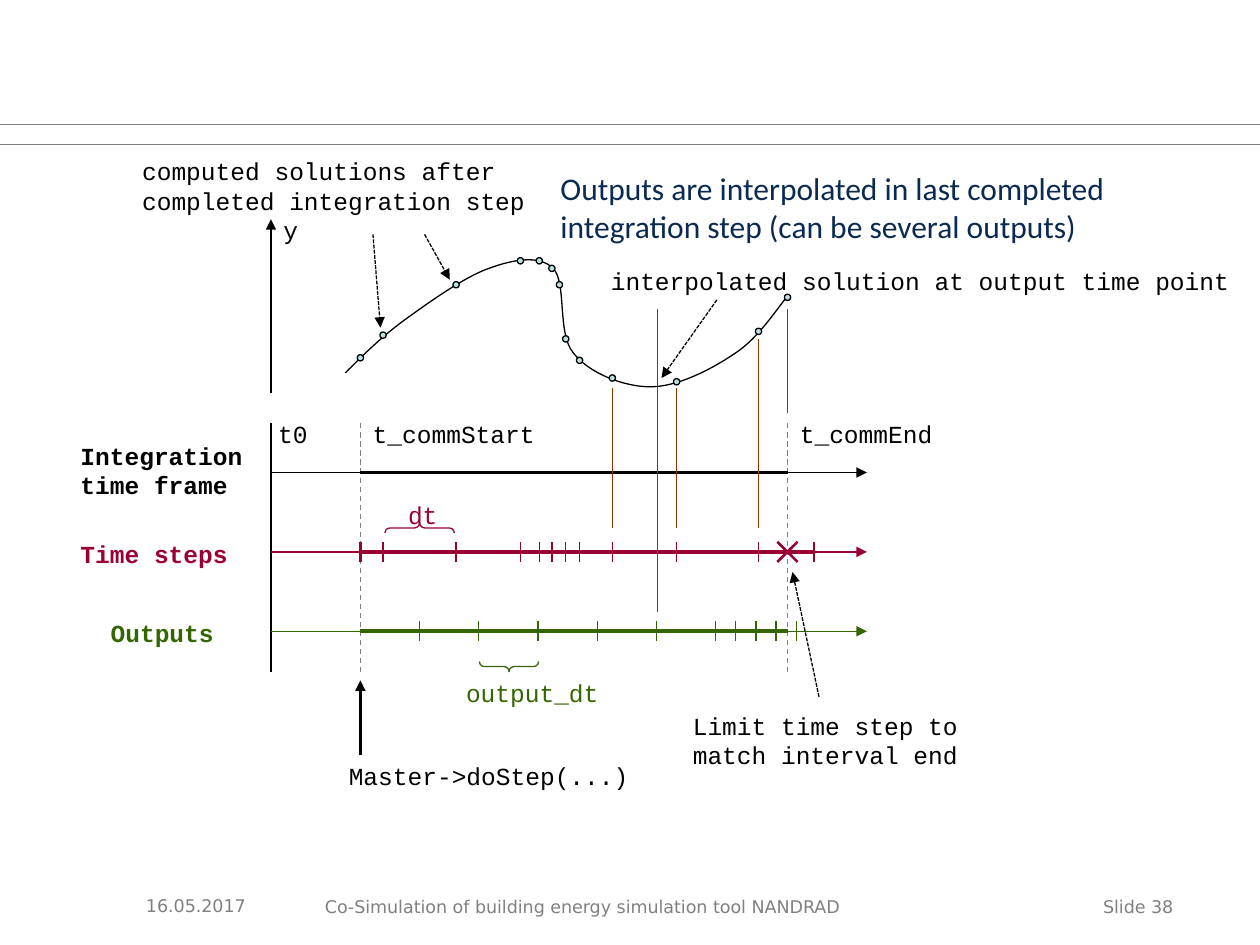
from lxml.etree import SubElement
from pptx import Presentation
from pptx.dml.color import RGBColor
from pptx.enum.dml import MSO_LINE
from pptx.enum.shapes import MSO_CONNECTOR, MSO_SHAPE
from pptx.enum.text import MSO_ANCHOR, PP_ALIGN
from pptx.oxml.ns import qn
from pptx.util import Inches, Pt

BLACK = RGBColor(0x00, 0x00, 0x00)
GRAY = RGBColor(0x80, 0x80, 0x80)
NAVY = RGBColor(0x0B, 0x2A, 0x51)
CRIMSON = RGBColor(0x99, 0x00, 0x33)
RUST = RGBColor(0x99, 0x33, 0x00)
OLIVE = RGBColor(0x33, 0x66, 0x00)
GREEN = RGBColor(0x00, 0x80, 0x00)
PALE_BLUE = RGBColor(0xBB, 0xE0, 0xE3)

MONO, SANS, FOOT = "Courier New", "Calibri", "DejaVu Sans"
LEFT, CENTER, RIGHT = PP_ALIGN.LEFT, PP_ALIGN.CENTER, PP_ALIGN.RIGHT

SLIDE_W, SLIDE_H = 10, 7.5
ORIGIN, COMM_START, COMM_END, AXIS_END = 2.15, 2.86, 6.25, 6.88
FRAME_Y, STEPS_Y, OUTPUTS_Y = 3.75, 4.38, 5.01
GRID_TOP, GRID_BOTTOM = 3.36, 5.33
TICK = 0.08
DOT = 0.05
LAST_STEP = 6.46
OUTPUT_DT, FINE_DT = 0.47, 0.16
OUTPUT_TIME = 5.22

SOLUTIONS = [
    (COMM_START, 2.84), (3.04, 2.66), (3.62, 2.26), (4.13, 2.07), (4.28, 2.07),
    (4.38, 2.13), (4.44, 2.26), (4.49, 2.69), (4.6, 2.86), (4.86, 3.0),
    (5.37, 3.03), (6.02, 2.63), (COMM_END, 2.36),
]
STEP_TIMES = [t for t, _ in SOLUTIONS[1:-1] if t != 4.44] + [LAST_STEP]
OUTPUT_TIMES = [COMM_START + OUTPUT_DT * i for i in range(1, 7)]
OUTPUT_TIMES += [OUTPUT_TIMES[-1] + FINE_DT * i for i in range(1, 5)]

CURVE_START = (2.74, 2.96)
CURVE = [
    ((2.88, 2.82), (3.02, 2.68), (3.21, 2.54)),
    ((3.39, 2.41), (3.68, 2.2), (3.88, 2.13)),
    ((4.07, 2.06), (4.28, 2.02), (4.39, 2.13)),
    ((4.5, 2.24), (4.42, 2.65), (4.55, 2.8)),
    ((4.67, 2.96), (4.95, 3.07), (5.16, 3.07)),
    ((5.38, 3.07), (5.65, 2.93), (5.84, 2.8)),
    ((6.02, 2.68), (6.16, 2.46), (COMM_END, 2.35)),
]

LANES = [
    (FRAME_Y, BLACK, COMM_END),
    (STEPS_Y, CRIMSON, LAST_STEP),
    (OUTPUTS_Y, OLIVE, COMM_END),
]
PROJECTIONS = [(4.86, 4.19, 3.08), (5.37, 4.19, 3.08), (6.02, 4.19, 2.69),
               (COMM_END, 3.28, 2.45)]
POINTERS = [
    ((2.96, 1.86), (3.02, 2.6)),
    ((3.37, 1.86), (3.57, 2.22)),
    ((6.5, 5.53), (6.29, 4.54)),
    ((5.69, 2.38), (5.25, 3.0)),
]
BRACES = [((3.04 + 3.62) / 2, 4.19, 0.55, 90, CRIMSON),
          (4.04, 5.29, OUTPUT_DT, 270, OLIVE)]

LABELS = [
    (2.86, 3.28, 1.49, 0.34, ["t_commStart"], BLACK, False, LEFT),
    (0.54, 3.45, 1.61, 0.57, ["Integration", "time frame"], BLACK, True, LEFT),
    (0.54, 4.23, 1.38, 0.34, ["Time steps"], CRIMSON, True, LEFT),
    (0.78, 4.86, 1.02, 0.34, ["Outputs"], OLIVE, True, LEFT),
    (2.96, 3.92, 0.79, 0.34, ["dt"], CRIMSON, False, CENTER),
    (3.57, 5.33, 1.31, 0.34, ["output_dt"], OLIVE, False, CENTER),
    (2.11, 3.28, 0.44, 0.34, ["t0"], BLACK, False, LEFT),
    (2.15, 1.66, 0.32, 0.34, ["y"], BLACK, False, LEFT),
    (2.67, 5.99, 2.43, 0.34, ["Master->doStep(...)"], BLACK, False, LEFT),
    (6.25, 3.28, 1.26, 0.34, ["t_commEnd"], BLACK, False, LEFT),
    (1.03, 1.19, 3.26, 0.57,
     ["computed solutions after", "completed integration step"], BLACK, False, LEFT),
    (5.4, 5.59, 2.32, 0.57,
     ["Limit time step to", "match interval end"], BLACK, False, LEFT),
    (4.75, 2.06, 5.13, 0.34,
     ["interpolated solution at output time point"], BLACK, False, LEFT),
]
STATEMENT = ["Outputs are interpolated in last completed",
             "integration step (can be several outputs)"]
FOOTERS = [
    (1.06, 6.99, 1.12, 0.4, ["16.05.2017"], LEFT),
    (2.48, 7.06, 5.98, 0.27,
     ["Co-Simulation of building energy simulation tool NANDRAD"], LEFT),
    (7.52, 7.06, 1.89, 0.27, ["Slide 38"], RIGHT),
]


def add_line(slide, start, end, color, width=0.75, dash=None, arrow=False):
    ends = [Inches(v) for v in (*start, *end)]
    line = slide.shapes.add_connector(MSO_CONNECTOR.STRAIGHT, *ends)
    line.line.color.rgb = color
    line.line.width = Pt(width)
    if dash:
        line.line.dash_style = dash
    if arrow:
        SubElement(line.line._get_or_add_ln(), qn("a:tailEnd"), type="triangle")
    SubElement(line._element.spPr, qn("a:effectLst"))


def add_tick(slide, time, lane_y, color, width=0.75):
    add_line(slide, (time, lane_y - TICK), (time, lane_y + TICK), color, width)


def style_outline(shape, color, fill=None):
    shape.shadow.inherit = False
    shape.line.color.rgb = color
    shape.line.width = Pt(0.75)
    if fill is None:
        shape.fill.background()
    else:
        shape.fill.solid()
        shape.fill.fore_color.rgb = fill


def add_text(slide, box, lines, font_name, size, color, bold=False,
             align=LEFT, wrap=False, anchor=MSO_ANCHOR.TOP):
    frame = slide.shapes.add_textbox(*map(Inches, box)).text_frame
    frame.word_wrap = wrap
    frame.vertical_anchor = anchor
    paragraph = frame.paragraphs[0]
    paragraph.alignment = align
    for i, text in enumerate(lines):
        if i:
            paragraph.add_line_break()
        paragraph.add_run().text = text
    font = paragraph.font
    font.name, font.size, font.bold = font_name, Pt(size), bold
    font.color.rgb = color


def bezier(points, t):
    weights = ((1 - t) ** 3, 3 * t * (1 - t) ** 2, 3 * t * t * (1 - t), t ** 3)
    return tuple(Inches(sum(w * p[axis] for w, p in zip(weights, points)))
                 for axis in (0, 1))


def add_curve(slide, steps=16):
    outline, start = [], CURVE_START
    for segment in CURVE:
        outline += [bezier((start, *segment), i / steps) for i in range(1, steps + 1)]
        start = segment[-1]
    builder = slide.shapes.build_freeform(*map(Inches, CURVE_START))
    builder.add_line_segments(outline, close=False)
    style_outline(builder.convert_to_shape(), BLACK)


def add_diagram(slide):
    add_curve(slide)
    for time in (COMM_START, COMM_END):
        add_line(slide, (time, GRID_TOP), (time, GRID_BOTTOM), GRAY, dash=MSO_LINE.DASH)
    add_line(slide, (ORIGIN, GRID_TOP), (ORIGIN, GRID_BOTTOM), BLACK)
    add_line(slide, (ORIGIN, 3.12), (ORIGIN, 1.74), BLACK, arrow=True)
    for y, color, end in LANES:
        add_line(slide, (ORIGIN, y), (AXIS_END, y), color, arrow=True)
        add_line(slide, (COMM_START, y), (end, y), color, 2.25)
    for time in STEP_TIMES:
        add_tick(slide, time, STEPS_Y, CRIMSON)
    add_tick(slide, COMM_START, STEPS_Y, CRIMSON, 1.5)
    for time in OUTPUT_TIMES:
        add_tick(slide, time, OUTPUTS_Y, OLIVE)
    for slant in (-TICK, TICK):
        add_line(slide, (COMM_END + slant, STEPS_Y - TICK),
                 (COMM_END - slant, STEPS_Y + TICK), CRIMSON, 1.5)
    for time, bottom, top in PROJECTIONS:
        add_line(slide, (time, bottom), (time, top), RUST)
    add_line(slide, (OUTPUT_TIME, 4.86), (OUTPUT_TIME, 2.45), GREEN)
    for center in SOLUTIONS:
        corner = [Inches(v - DOT / 2) for v in center]
        dot = slide.shapes.add_shape(MSO_SHAPE.OVAL, *corner, Inches(DOT), Inches(DOT))
        style_outline(dot, BLACK, PALE_BLUE)
    for x, y, span, rotation, color in BRACES:
        box = (x - TICK / 2, y - span / 2, TICK, span)
        brace = slide.shapes.add_shape(MSO_SHAPE.LEFT_BRACE, *map(Inches, box))
        brace.rotation = rotation
        brace.adjustments[0] = 0.5
        style_outline(brace, color)
    for start, end in POINTERS:
        add_line(slide, start, end, BLACK, dash=MSO_LINE.SQUARE_DOT, arrow=True)
    add_line(slide, (COMM_START, 5.99), (COMM_START, 5.4), BLACK, 1.5, arrow=True)


def main():
    deck = Presentation()
    deck.slide_width, deck.slide_height = Inches(SLIDE_W), Inches(SLIDE_H)
    slide = deck.slides.add_slide(deck.slide_layouts[6])
    for y in (0.99, 1.15):
        add_line(slide, (0, y), (SLIDE_W, y), GRAY, 0.5)
    add_diagram(slide)
    for *box, lines, color, bold, align in LABELS:
        add_text(slide, box, lines, MONO, 14, color, bold, align)
    add_text(slide, (4.35, 1.29, 4.63, 0.71), STATEMENT, SANS, 18, NAVY)
    for *box, lines, align in FOOTERS:
        add_text(slide, box, lines, FOOT, 10, GRAY, align=align, wrap=True,
                 anchor=MSO_ANCHOR.MIDDLE)
    deck.save("out.pptx")


if __name__ == "__main__":
    main()
